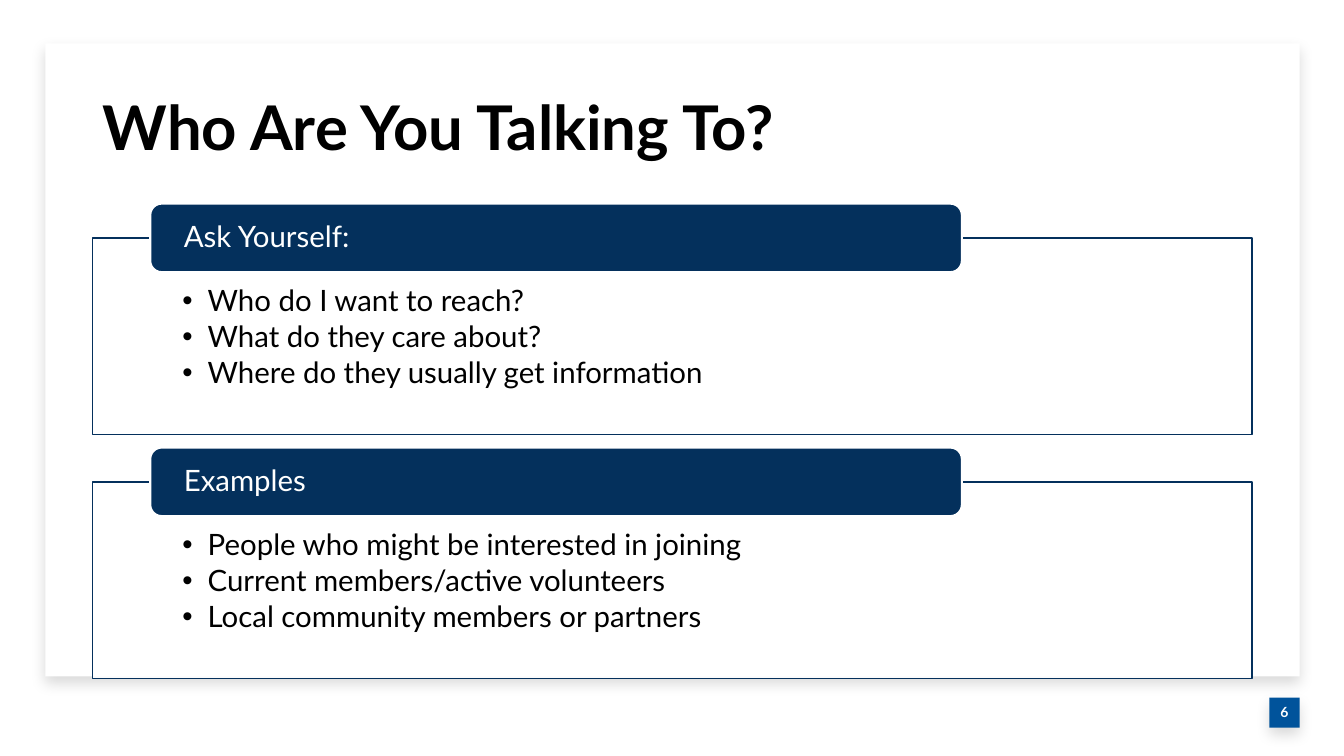
from dataclasses import dataclass

from lxml import etree
from pptx import Presentation
from pptx.dml.color import RGBColor
from pptx.enum.shapes import MSO_SHAPE
from pptx.enum.text import MSO_ANCHOR, MSO_AUTO_SIZE, PP_ALIGN
from pptx.oxml.ns import qn
from pptx.shapes.autoshape import Shape
from pptx.slide import Slide
from pptx.text.text import TextFrame, _Paragraph
from pptx.util import Emu, Inches, Pt

RECTANGLE = MSO_SHAPE.RECTANGLE
ROUNDED = MSO_SHAPE.ROUNDED_RECTANGLE
TOP, MIDDLE = MSO_ANCHOR.TOP, MSO_ANCHOR.MIDDLE
LEFT, CENTER = PP_ALIGN.LEFT, PP_ALIGN.CENTER

WHITE = RGBColor(0xFF, 0xFF, 0xFF)
BLACK = RGBColor(0x00, 0x00, 0x00)
NAVY = RGBColor(0x04, 0x30, 0x5C)
BLUE = RGBColor(0x00, 0x53, 0x9B)

FONT = "Lato"
TEXT_SIZE = 21
SECTION_TOP = 2.02
SECTION_PITCH = 2.42
FRAME_OFFSET = 0.34


@dataclass(frozen=True)
class Box:
    left: float
    top: float
    width: float
    height: float

    def lengths(self) -> tuple[Emu, Emu, Emu, Emu]:
        return (Inches(self.left), Inches(self.top),
                Inches(self.width), Inches(self.height))


@dataclass(frozen=True)
class Section:
    heading: str
    points: tuple[str, ...]


SECTIONS = (
    Section("Ask Yourself:", (
        "Who do I want to reach?",
        "What do they care about?",
        "Where do they usually get information",
    )),
    Section("Examples", (
        "People who might be interested in joining",
        "Current members/active volunteers",
        "Local community members or partners",
    )),
)


def add_box(slide: Slide, box: Box, fill: RGBColor, kind: MSO_SHAPE = RECTANGLE,
            line: RGBColor | None = None, line_width: float = 1) -> Shape:
    shape = slide.shapes.add_shape(kind, *box.lengths())
    shape.shadow.inherit = False
    shape.fill.solid()
    shape.fill.fore_color.rgb = fill
    if line is None:
        shape.line.fill.background()
    else:
        shape.line.color.rgb = line
        shape.line.width = Pt(line_width)
    return shape


def add_soft_shadow(shape: Shape) -> None:
    effects = shape.element.spPr.find(qn("a:effectLst"))
    shadow = etree.SubElement(effects, qn("a:outerShdw"), blurRad=str(Pt(10)),
                              dist=str(Pt(5)), dir="5400000", algn="t", rotWithShape="0")
    color = etree.SubElement(shadow, qn("a:srgbClr"), val="000000")
    etree.SubElement(color, qn("a:alpha"), val="15000")


def set_fill_opacity(shape: Shape, percent: int) -> None:
    color = shape.element.spPr.find(qn("a:solidFill")).find(qn("a:srgbClr"))
    etree.SubElement(color, qn("a:alpha"), val=str(percent * 1000))


def set_frame(frame: TextFrame, anchor: MSO_ANCHOR, left: float, top: float,
              right: float, bottom: float) -> None:
    frame.word_wrap = True
    frame.auto_size = MSO_AUTO_SIZE.NONE
    frame.vertical_anchor = anchor
    frame.margin_left, frame.margin_top = Inches(left), Inches(top)
    frame.margin_right, frame.margin_bottom = Inches(right), Inches(bottom)


def write(paragraph: _Paragraph, text: str, size: float, color: RGBColor,
          bold: bool = False, align: PP_ALIGN = LEFT) -> None:
    paragraph.alignment = align
    paragraph.line_spacing = 0.9
    run = paragraph.add_run()
    run.text = text
    run.font.name = FONT
    run.font.size = Pt(size)
    run.font.bold = bold
    run.font.color.rgb = color


def add_bullet(paragraph: _Paragraph) -> None:
    properties = paragraph._p.get_or_add_pPr()
    properties.set("marL", str(Inches(0.25)))
    properties.set("indent", str(Inches(-0.25)))
    etree.SubElement(properties, qn("a:buFont"), typeface="Arial")
    etree.SubElement(properties, qn("a:buChar"), char="•")


def add_page_number(slide: Slide) -> None:
    badge = add_box(slide, Box(12.59, 6.92, 0.3, 0.3), BLUE)
    add_soft_shadow(badge)
    set_frame(badge.text_frame, MIDDLE, 0, 0, 0, 0)
    write(badge.text_frame.paragraphs[0], "6", 10, WHITE, bold=True, align=CENTER)


def add_title(slide: Slide) -> None:
    title = slide.shapes.title
    title.left, title.top, title.width, title.height = Box(0.92, 0.74, 11.5, 1.1).lengths()
    set_frame(title.text_frame, MIDDLE, 0.1, 0.05, 0.1, 0.05)
    write(title.text_frame.paragraphs[0], "Who Are You Talking To?", 44, BLACK, bold=True)
    # Bring the title in front of the white card.
    title.element.getparent().append(title.element)


def add_section(slide: Slide, section: Section, top: float) -> None:
    """Draw a framed bullet list with a heading tab over its upper edge."""
    frame = add_box(slide, Box(0.92, top + FRAME_OFFSET, 11.5, 1.95), WHITE, line=NAVY)
    set_fill_opacity(frame, 90)
    set_frame(frame.text_frame, TOP, 0.89, 0.48, 0.89, 0.16)
    for index, point in enumerate(section.points):
        paragraph = (frame.text_frame.add_paragraph() if index
                     else frame.text_frame.paragraphs[0])
        paragraph.level = 1
        add_bullet(paragraph)
        paragraph.space_after = Pt(3)
        write(paragraph, point, TEXT_SIZE, BLACK)

    tab = add_box(slide, Box(1.49, top, 8.05, 0.68), NAVY, ROUNDED, WHITE, 1.5)
    set_frame(tab.text_frame, MIDDLE, 0.3, 0, 0.3, 0)
    write(tab.text_frame.paragraphs[0], section.heading, TEXT_SIZE, WHITE)


def main() -> None:
    presentation = Presentation()
    presentation.slide_width = Inches(13.33)
    presentation.slide_height = Inches(7.5)
    title_only = presentation.slide_layouts[5]
    slide = presentation.slides.add_slide(title_only)

    add_page_number(slide)
    card = add_box(slide, Box(0.45, 0.43, 12.44, 6.28), WHITE)
    add_soft_shadow(card)
    add_title(slide)
    for index, section in enumerate(SECTIONS):
        add_section(slide, section, SECTION_TOP + index * SECTION_PITCH)

    presentation.save("out.pptx")


if __name__ == "__main__":
    main()
